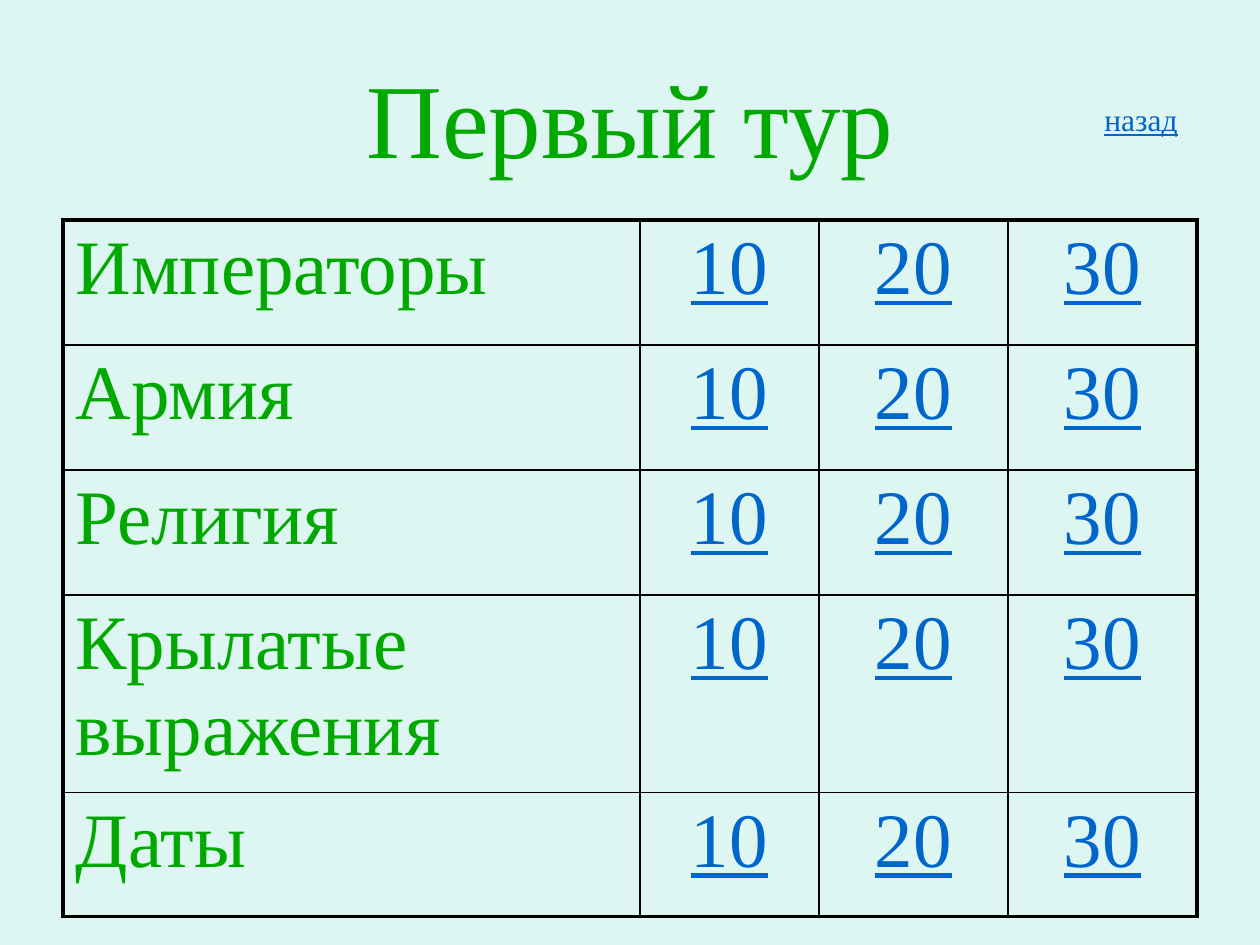
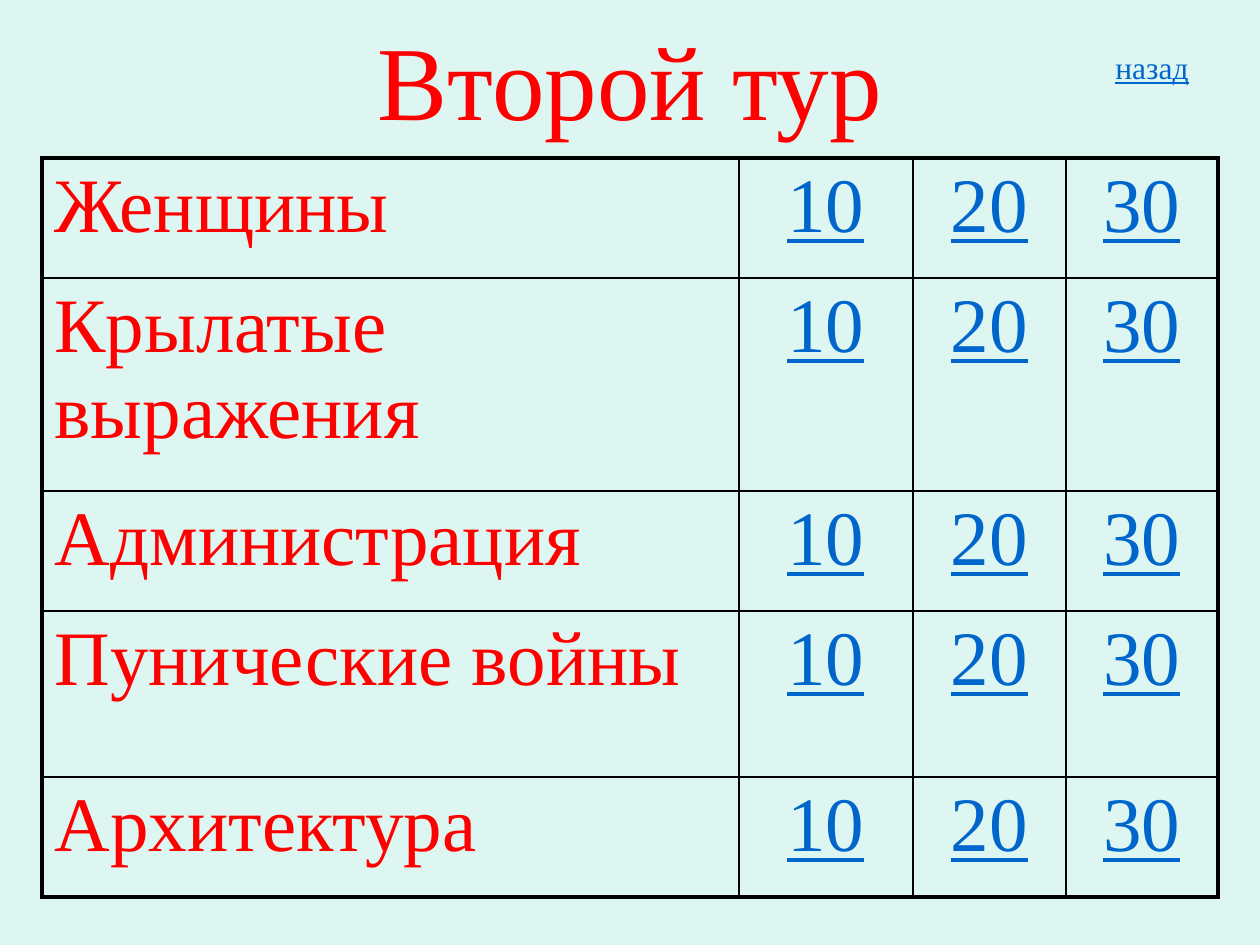
from lxml.etree import SubElement as Sub
from pptx import Presentation
from pptx.dml.color import RGBColor
from pptx.enum.text import MSO_ANCHOR as Anchor, MSO_AUTO_SIZE as Auto, PP_ALIGN as Align
from pptx.oxml.ns import qn
from pptx.util import Pt

PX = 914400 / 126
FONT = "Times New Roman"
MINT = RGBColor(0xDE, 0xF6, 0xF1)
GREEN = RGBColor(0x00, 0xA8, 0x00)
RED = RGBColor(0xFF, 0x00, 0x00)
BLUE = RGBColor(0x00, 0x66, 0xCC)
BLACK = RGBColor(0x00, 0x00, 0x00)
THIN, THICK = Pt(1), Pt(2.25)
POINTS = ["10", "20", "30"]


def emu(*sizes):
    return [round(size * PX) for size in sizes]


def write(frame, text, size, color, align=Align.LEFT, link=False):
    para = frame.paragraphs[0]
    para.alignment = align
    run = para.add_run()
    run.text = text
    font = run.font
    font.name, font.size, font.color.rgb = FONT, Pt(size), color
    if link:
        font.underline = True


def add_title(slide, box, text, color):
    frame = slide.shapes.add_textbox(*emu(*box)).text_frame
    frame.word_wrap = True
    frame.vertical_anchor = Anchor.MIDDLE
    write(frame, text, 60, color, align=Align.CENTER)


def add_back(slide, left, top):
    frame = slide.shapes.add_textbox(*emu(left, top, 102, 50)).text_frame
    frame.word_wrap = False
    frame.auto_size = Auto.SHAPE_TO_FIT_TEXT
    write(frame, "назад", 18, BLUE, link=True)


def add_edge(cell, side, width):
    line = Sub(cell._tc.get_or_add_tcPr(), qn("a:ln" + side), w=str(width))
    fill = Sub(line, qn("a:solidFill"))
    Sub(fill, qn("a:srgbClr"), val=str(BLACK))


def add_board(slide, left, top, cols, rows, topics, color):
    box = emu(left, top, sum(cols), sum(rows))
    table = slide.shapes.add_table(len(rows), len(cols), *box).table
    table.first_row = table.horz_banding = False
    for col, width in zip(table.columns, emu(*cols)):
        col.width = width
    for row, height in zip(table.rows, emu(*rows)):
        row.height = height
    for y, topic in enumerate(topics):
        for x, text in enumerate([topic] + POINTS):
            cell = table.cell(y, x)
            outer = {"L": x == 0, "R": x == len(cols) - 1,
                     "T": y == 0, "B": y == len(rows) - 1}
            for side, edge in outer.items():
                add_edge(cell, side, THICK if edge else THIN)
            cell.fill.background()
            if x:
                write(cell.text_frame, text, 44, BLUE, align=Align.CENTER, link=True)
            else:
                write(cell.text_frame, text, 44, color)


def add_round(deck, title, color, head, back, board):
    slide = deck.slides.add_slide(deck.slide_layouts[6])
    fill = slide.background.fill
    fill.solid()
    fill.fore_color.rgb = MINT
    add_title(slide, head, title, color)
    add_board(slide, *board, color)
    add_back(slide, *back)


def main():
    deck = Presentation()
    deck.slide_width, deck.slide_height = emu(1260, 945)
    add_round(deck, "Первый тур", GREEN, (63, 37, 1134, 158), (1092, 94),
              (63, 220, [577, 179, 189, 189], [125, 125, 125, 197, 124],
               ["Императоры", "Армия", "Религия", "Крылатые выражения", "Даты"]))
    add_round(deck, "Второй тур", RED, (63, 0, 1134, 157), (1103, 42),
              (42, 158, [697, 174, 153, 152], [120, 213, 120, 166, 120],
               ["Женщины", "Крылатые выражения", "Администрация",
                "Пунические войны", "Архитектура"]))
    deck.save("out.pptx")


if __name__ == "__main__":
    main()
